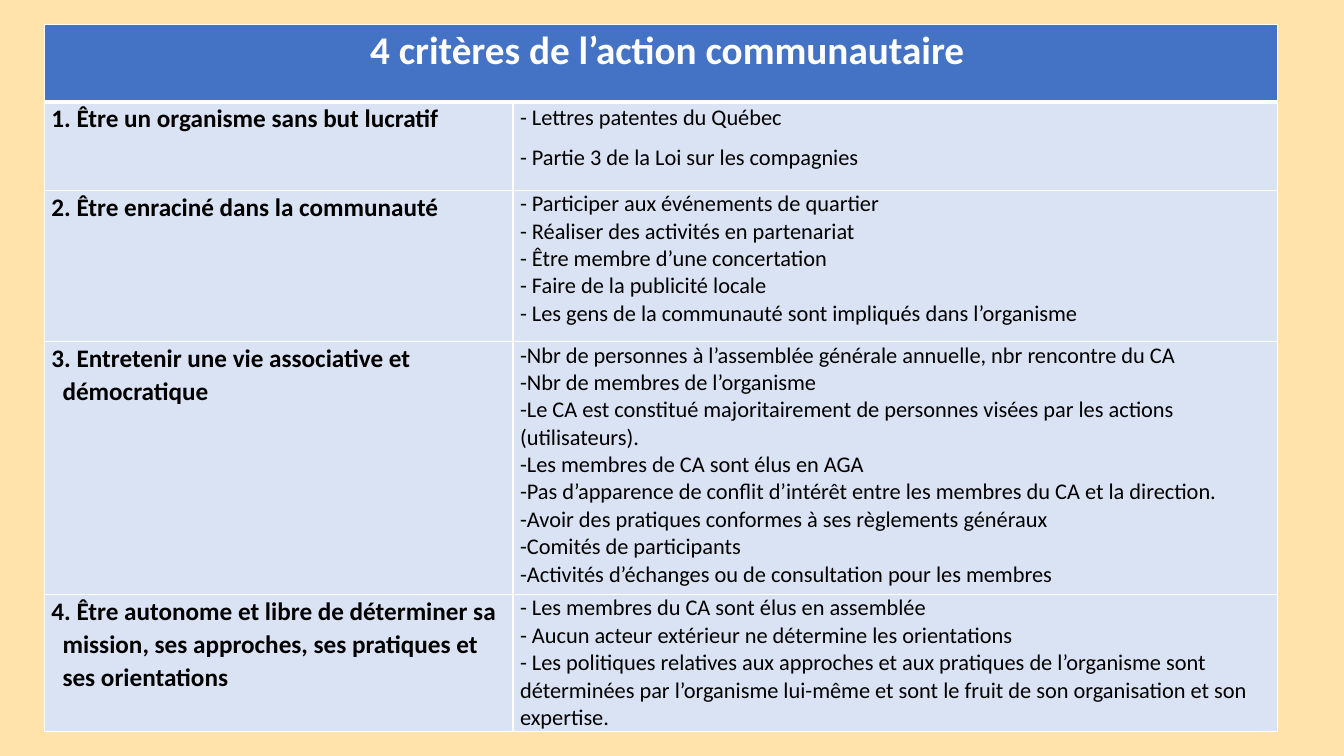
from lxml.etree import SubElement
from pptx import Presentation
from pptx.dml.color import RGBColor
from pptx.enum.text import PP_ALIGN
from pptx.oxml.ns import qn
from pptx.util import Pt

HEADING = "4 critères de l’action communautaire"
CRITERIA = [
    ("1. Être un organisme sans but lucratif",
     ["- Lettres patentes du Québec",
      "- Partie 3 de la Loi sur les compagnies"]),
    ("2. Être enraciné dans la communauté",
     ["- Participer aux événements de quartier",
      "- Réaliser des activités en partenariat",
      "- Être membre d’une concertation",
      "- Faire de la publicité locale",
      "- Les gens de la communauté sont impliqués dans l’organisme"]),
    ("3. Entretenir une vie associative et démocratique",
     ["-Nbr de personnes à l’assemblée générale annuelle, nbr rencontre du CA",
      "-Nbr de membres de l’organisme",
      "-Le CA est constitué majoritairement de personnes visées par les actions "
      "(utilisateurs).",
      "-Les membres de CA sont élus en AGA",
      "-Pas d’apparence de conflit d’intérêt entre les membres du CA et la direction.",
      "-Avoir des pratiques conformes à ses règlements généraux",
      "-Comités de participants",
      "-Activités d’échanges ou de consultation pour les membres"]),
    ("4. Être autonome et libre de déterminer sa mission, ses approches, "
     "ses pratiques et ses orientations",
     ["- Les membres du CA sont élus en assemblée",
      "- Aucun acteur extérieur ne détermine les orientations",
      "- Les politiques relatives aux approches et aux pratiques de l’organisme sont "
      "déterminées par l’organisme lui-même et sont le fruit de son organisation et "
      "son expertise."]),
]

SAND = RGBColor(0xFF, 0xE3, 0xAB)
BLUE = RGBColor(0x44, 0x72, 0xC4)
PALE_BLUE = RGBColor(0xDA, 0xE3, 0xF3)
WHITE = RGBColor(0xFF, 0xFF, 0xFF)
BLACK = RGBColor(0, 0, 0)

LEFT, TOP = 31.7, 17.3
COLUMN_WIDTHS = [334.8, 545.8]
ROW_HEIGHTS = [55.4, 63.4, 108, 180.7, 95]
SIDE_MARGIN = 5
HANGING = Pt(8)


def draw_borders(cell, top=1, bottom=1):
    properties = cell._tc.get_or_add_tcPr()
    for side, width in (("L", 1), ("R", 1), ("T", top), ("B", bottom)):
        line = SubElement(properties, qn(f"a:ln{side}"), w=str(Pt(width)))
        fill = SubElement(line, qn("a:solidFill"))
        SubElement(fill, qn("a:srgbClr"), val=str(WHITE))


def fill_cell(cell, lines, size, color, background, bold=False, spaced=False, hanging=False):
    cell.margin_left = cell.margin_right = Pt(SIDE_MARGIN)
    cell.margin_top = cell.margin_bottom = 0
    cell.fill.solid()
    cell.fill.fore_color.rgb = background
    cell.text = "\n".join(lines)
    for paragraph in cell.text_frame.paragraphs:
        if hanging:
            properties = paragraph._p.get_or_add_pPr()
            properties.set("marL", str(HANGING))
            properties.set("indent", str(-HANGING))
        if spaced:
            paragraph.line_spacing = 1.07
            paragraph.space_after = Pt(8)
        font = paragraph.font
        font.name, font.size, font.bold = "Calibri", Pt(size), bold
        font.color.rgb = color


def main():
    deck = Presentation()
    deck.slide_width, deck.slide_height = Pt(960), Pt(540)
    slide = deck.slides.add_slide(deck.slide_layouts[6])
    slide.background.fill.solid()
    slide.background.fill.fore_color.rgb = SAND

    table = slide.shapes.add_table(
        len(ROW_HEIGHTS), len(COLUMN_WIDTHS), Pt(LEFT), Pt(TOP),
        Pt(sum(COLUMN_WIDTHS)), Pt(sum(ROW_HEIGHTS))).table
    for column, width in zip(table.columns, COLUMN_WIDTHS):
        column.width = Pt(width)
    for index, (row, height) in enumerate(zip(table.rows, ROW_HEIGHTS)):
        row.height = Pt(height)
        for cell in row.cells:
            draw_borders(cell, top=3 if index == 1 else 1, bottom=3 if index == 0 else 1)

    heading = table.cell(0, 0)
    heading.merge(table.cell(0, 1))
    fill_cell(heading, [HEADING], 28, WHITE, BLUE, bold=True, spaced=True)
    heading.margin_left = Pt(SIDE_MARGIN + 9)
    heading.text_frame.paragraphs[0].alignment = PP_ALIGN.CENTER

    for index, (criterion, evidence) in enumerate(CRITERIA, start=1):
        fill_cell(table.cell(index, 0), [criterion], 18, BLACK, PALE_BLUE,
                  bold=True, spaced=True, hanging=True)
        fill_cell(table.cell(index, 1), evidence, 16, BLACK, PALE_BLUE, spaced=index == 1)

    deck.save("out.pptx")


if __name__ == "__main__":
    main()
